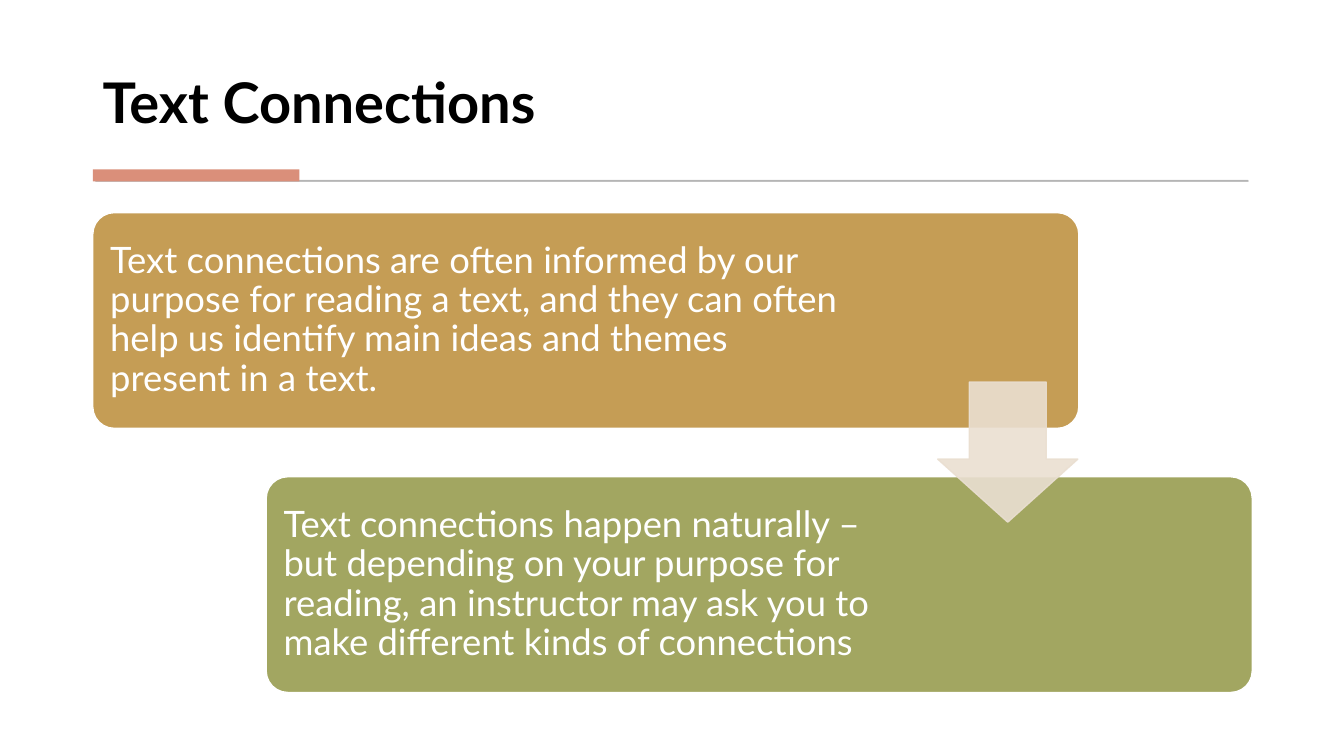
from lxml import etree
from pptx import Presentation
from pptx.dml.color import RGBColor
from pptx.enum.shapes import MSO_SHAPE
from pptx.enum.text import MSO_ANCHOR, PP_ALIGN
from pptx.oxml.ns import qn
from pptx.util import Inches, Pt


def color(hex_text):
    return RGBColor.from_string(hex_text)


def paint(fill, hex_text, opacity):
    """Make a fill solid, with opacity in percent."""
    fill.solid()
    fill.fore_color.rgb = color(hex_text)
    if opacity < 100:
        for tone in fill._xPr.iter(qn("a:srgbClr")):
            etree.SubElement(tone, qn("a:alpha"), val=str(opacity * 1000))


def write(box, text, size, hex_text, bold=False, anchor=MSO_ANCHOR.MIDDLE,
          insets=(0.1, 0.05, 0.1, 0.05), font="Lato"):
    frame = box.text_frame
    frame.word_wrap = True
    frame.vertical_anchor = anchor
    (frame.margin_left, frame.margin_top,
     frame.margin_right, frame.margin_bottom) = map(Inches, insets)
    para = frame.paragraphs[0]
    para.alignment = PP_ALIGN.LEFT
    para.line_spacing = 0.9
    span = para.add_run()
    span.text = text
    span.font.name = font
    span.font.size = Pt(size)
    span.font.bold = bold
    span.font.color.rgb = color(hex_text)


class SlideBuilder:
    title_color = "000000"
    card_text_color = "FFFFFF"
    title_size = 40
    card_text_size = 26

    def __init__(self, page):
        self.page = page

    def shape(self, kind, area, fill, line=None, width=1, opacity=100, adjust=()):
        shape = self.page.shapes.add_shape(kind, *map(Inches, area))
        shape.shadow.inherit = False
        for index, value in enumerate(adjust):
            shape.adjustments[index] = value
        paint(shape.fill, fill, opacity)
        if line:
            shape.line.width = Pt(width)
            paint(shape.line.fill, line, opacity)
        else:
            shape.line.fill.background()
        return shape

    def title(self, text, area):
        box = self.page.shapes.add_textbox(*map(Inches, area))
        write(box, text, self.title_size, self.title_color, bold=True,
              anchor=MSO_ANCHOR.BOTTOM)

    def card(self, text, left, top, fill, right_inset):
        card = self.shape(MSO_SHAPE.ROUNDED_RECTANGLE, (left, top, 9.78, 2.14),
                          fill, line="FFFFFF", adjust=[0.1])
        write(card, text, self.card_text_size, self.card_text_color,
              insets=(0.11, 0.11, right_inset, 0.11))


def main():
    deck = Presentation()
    deck.slide_width, deck.slide_height = Inches(13.33), Inches(7.5)
    builder = SlideBuilder(deck.slides.add_slide(deck.slide_layouts[6]))

    builder.shape(MSO_SHAPE.RECTANGLE, (0, 0, 13.33, 7.5), "FFFFFF")
    builder.title("Text Connections", (0.92, 0.28, 11.49, 1.11))
    builder.shape(MSO_SHAPE.RECTANGLE, (0.95, 1.79, 11.43, 0.01), "595959",
                  line="595959", width=0.75, opacity=30)
    builder.shape(MSO_SHAPE.RECTANGLE, (0.92, 1.68, 2.05, 0.12), "DA8F7A")

    builder.card("Text connections are often informed by our purpose for reading "
                 "a text, and they can often help us identify main ideas and "
                 "themes present in a text.", 0.92, 2.11, "C59D55", 2.21)
    builder.card("Text connections happen naturally – but depending on your "
                 "purpose for reading, an instructor may ask you to make "
                 "different kinds of connections", 2.64, 4.73, "A2A661", 3.24)
    builder.shape(MSO_SHAPE.DOWN_ARROW, (9.3, 3.79, 1.39, 1.39), "EADFD1",
                  line="EADFD1", opacity=90, adjust=[0.55, 0.45])

    deck.save("out.pptx")


if __name__ == "__main__":
    main()
